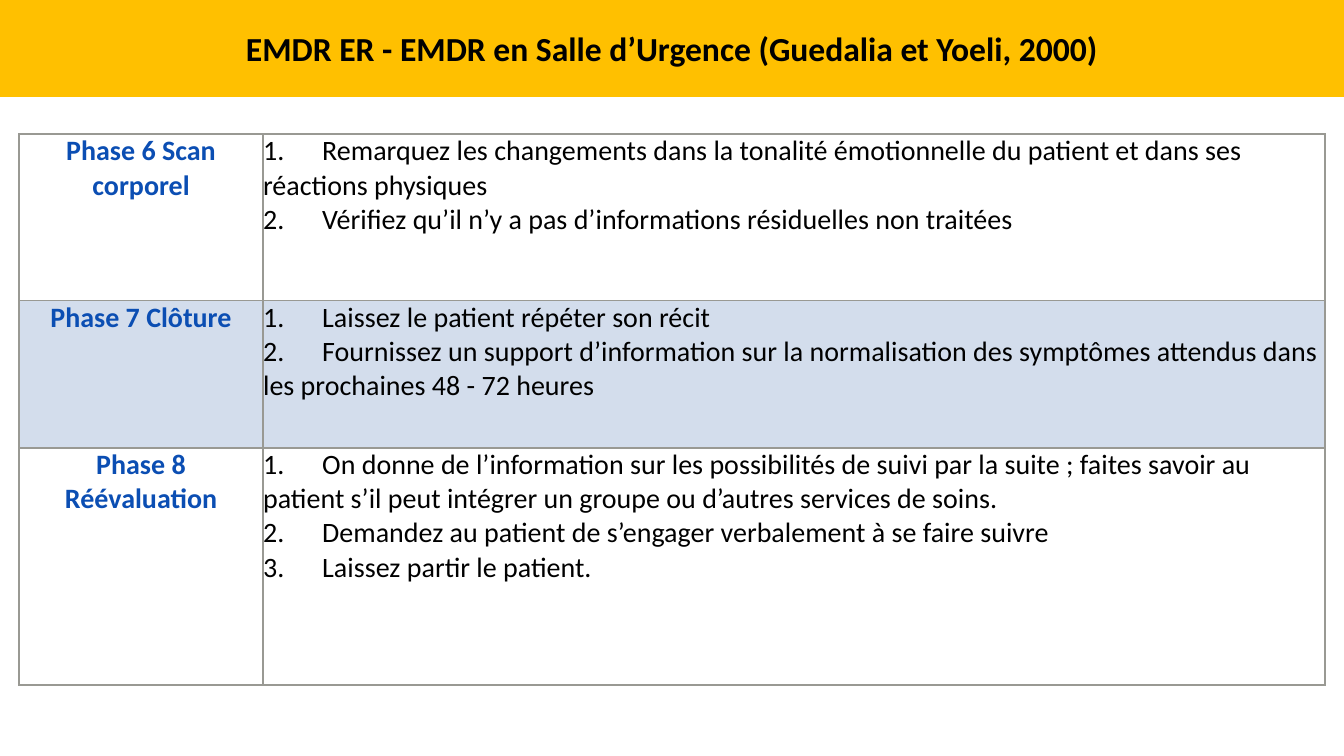
from dataclasses import dataclass

from lxml import etree
from pptx import Presentation
from pptx import util as u
from pptx.dml.color import RGBColor
from pptx.enum import shapes, text
from pptx.oxml.ns import qn


@dataclass(frozen=True)
class Theme:
    font: str = "Calibri"
    title_size: u.Pt = u.Pt(24)
    body_size: u.Pt = u.Pt(20)
    banner: str = "FFC000"
    ink: str = "000000"
    phase: str = "0B4EB3"
    band: str = "D3DDEC"
    border: str = "999993"
    border_width: u.Pt = u.Pt(1.5)


@dataclass(frozen=True)
class Phase:
    name: str
    height: float
    steps: tuple[str, ...]
    shaded: bool = False


THEME = Theme()
TITLE = "EMDR ER - EMDR en Salle d’Urgence (Guedalia et Yoeli, 2000)"
SLIDE_WIDTH, SLIDE_HEIGHT = u.Cm(33.87), u.Cm(19.05)
COLUMN_WIDTHS = (6.15, 26.77)
STEP_TAB = u.Cm(1.49)
PHASES = (
    Phase("Phase 6 Scan corporel", 4.19, (
        "Remarquez les changements dans la tonalité émotionnelle du patient "
        "et dans ses réactions physiques",
        "Vérifiez qu’il n’y a pas d’informations résiduelles non traitées",
    )),
    Phase("Phase 7 Clôture", 3.71, (
        "Laissez le patient répéter son récit",
        "Fournissez un support d’information sur la normalisation des symptômes "
        "attendus dans les prochaines 48 - 72 heures",
    ), shaded=True),
    Phase("Phase 8 Réévaluation", 5.98, (
        "On donne de l’information sur les possibilités de suivi par la suite ; "
        "faites savoir au patient s’il peut intégrer un groupe ou d’autres "
        "services de soins.",
        "Demandez au patient de s’engager verbalement à se faire suivre",
        "Laissez partir le patient.",
    )),
)


def style_text(frame, size: u.Pt, color: str, bold: bool, align) -> None:
    for paragraph in frame.paragraphs:
        paragraph.alignment = align
        for run in paragraph.runs:
            run.font.name = THEME.font
            run.font.size = size
            run.font.bold = bold
            run.font.color.rgb = RGBColor.from_string(color)


def add_step_tabs(frame) -> None:
    """Align the first line of each step after its number."""
    for paragraph in frame.paragraphs:
        properties = paragraph._p.get_or_add_pPr()
        tabs = etree.SubElement(properties, qn("a:tabLst"))
        etree.SubElement(tabs, qn("a:tab"), pos=str(int(STEP_TAB)), algn="l")


def add_borders(cell) -> None:
    properties = cell._tc.get_or_add_tcPr()
    for side in ("lnL", "lnR", "lnT", "lnB"):
        line = etree.SubElement(properties, qn(f"a:{side}"), w=str(int(THEME.border_width)))
        fill = etree.SubElement(line, qn("a:solidFill"))
        etree.SubElement(fill, qn("a:srgbClr"), val=THEME.border)


def format_cell(cell, shaded: bool) -> None:
    cell.margin_left = cell.margin_right = cell.margin_top = cell.margin_bottom = 0
    add_borders(cell)
    if shaded:
        cell.fill.solid()
        cell.fill.fore_color.rgb = RGBColor.from_string(THEME.band)
    else:
        cell.fill.background()


def add_banner(slide) -> None:
    banner = slide.shapes.add_shape(
        shapes.MSO_SHAPE.RECTANGLE, 0, 0, SLIDE_WIDTH, u.Cm(2.44))
    banner.shadow.inherit = False
    banner.fill.solid()
    banner.fill.fore_color.rgb = RGBColor.from_string(THEME.banner)
    banner.line.color.rgb = RGBColor.from_string(THEME.banner)
    banner.line.width = u.Pt(1)
    frame = banner.text_frame
    frame.text = TITLE
    frame.word_wrap = True
    frame.vertical_anchor = text.MSO_ANCHOR.MIDDLE
    style_text(frame, THEME.title_size, THEME.ink, True, text.PP_ALIGN.CENTER)


def add_phase_table(slide) -> None:
    table = slide.shapes.add_table(
        len(PHASES), len(COLUMN_WIDTHS), u.Cm(0.48), u.Cm(3.38),
        u.Cm(sum(COLUMN_WIDTHS)), u.Cm(sum(phase.height for phase in PHASES))).table
    table.first_row = table.horz_banding = False
    for column, width in zip(table.columns, COLUMN_WIDTHS):
        column.width = u.Cm(width)

    for row, phase in zip(table.rows, PHASES):
        row.height = u.Cm(phase.height)
        name_cell, steps_cell = row.cells
        for cell in (name_cell, steps_cell):
            format_cell(cell, phase.shaded)

        # Phase name
        name_cell.text_frame.text = phase.name
        style_text(name_cell.text_frame, THEME.body_size, THEME.phase, True,
                   text.PP_ALIGN.CENTER)

        # Numbered steps
        steps = steps_cell.text_frame
        steps.text = "\n".join(
            f"{number}.\t{step}" for number, step in enumerate(phase.steps, 1))
        style_text(steps, THEME.body_size, THEME.ink, False, text.PP_ALIGN.LEFT)
        add_step_tabs(steps)


def main() -> None:
    deck = Presentation()
    deck.slide_width, deck.slide_height = SLIDE_WIDTH, SLIDE_HEIGHT
    slide = deck.slides.add_slide(deck.slide_layouts[6])
    add_banner(slide)
    add_phase_table(slide)
    deck.save("out.pptx")


if __name__ == "__main__":
    main()
